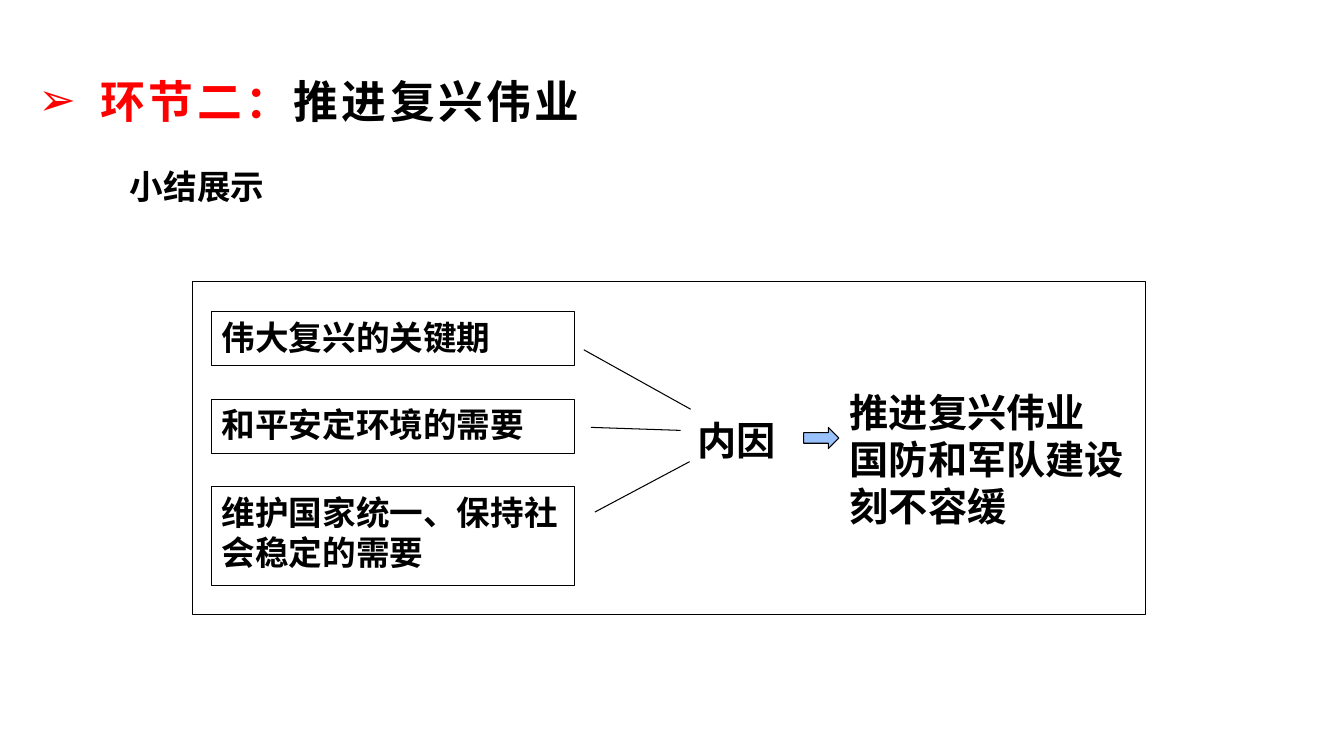
from lxml import etree
from pptx import Presentation
from pptx.dml.color import RGBColor
from pptx.enum.shapes import MSO_CONNECTOR, MSO_SHAPE
from pptx.enum.text import MSO_ANCHOR, PP_ALIGN
from pptx.oxml.ns import qn
from pptx.util import Inches, Pt

BLACK = RGBColor(0x00, 0x00, 0x00)
RED = RGBColor(0xFF, 0x00, 0x00)
LIGHT_BLUE = RGBColor(0x99, 0xC2, 0xFD)
RECTANGLE = MSO_SHAPE.RECTANGLE
RIGHT_ARROW = MSO_SHAPE.RIGHT_ARROW
STRAIGHT = MSO_CONNECTOR.STRAIGHT
TOP = MSO_ANCHOR.TOP
LEFT = PP_ALIGN.LEFT
CJK_FONT = "Noto Sans CJK SC"

prs = Presentation()
prs.slide_width = Inches(13.33)
prs.slide_height = Inches(7.5)
slide = prs.slides.add_slide(prs.slide_layouts[6])
shapes = slide.shapes


def add_outlined(kind, left, top, width, height, fill=None):
    shape = shapes.add_shape(kind, Inches(left), Inches(top), Inches(width), Inches(height))
    shape.shadow.inherit = False
    if fill is None:
        shape.fill.background()
    else:
        shape.fill.solid()
        shape.fill.fore_color.rgb = fill
    shape.line.color.rgb = BLACK
    shape.line.width = Pt(0.75)
    return shape


def add_bold_run(paragraph, text, size, font=CJK_FONT, color=BLACK):
    paragraph.alignment = LEFT
    run = paragraph.add_run()
    run.text = text
    run.font.size = Pt(size)
    run.font.bold = True
    run.font.name = font
    run.font.color.rgb = color
    east_asian = etree.SubElement(run.font._element, qn("a:ea"))
    east_asian.set("typeface", CJK_FONT)
    return run


# Summary frame with the three reasons
add_outlined(RECTANGLE, 1.91, 2.79, 9.45, 3.31)
reasons = [
    ("伟大复兴的关键期", 0.54),
    ("和平安定环境的需要", 0.54),
    ("维护国家统一、保持社会稳定的需要", 0.98),
]
for row, (reason, height) in enumerate(reasons):
    reason_box = add_outlined(RECTANGLE, 2.1, 3.09 + 0.87 * row, 3.6, height)
    reason_frame = reason_box.text_frame
    reason_frame.word_wrap = True
    reason_frame.vertical_anchor = TOP
    add_bold_run(reason_frame.paragraphs[0], reason, 24, "Arial")

# Lines from the reasons to the internal cause
for x1, y1, x2, y2 in [
    (5.79, 3.47, 6.85, 4.06),
    (5.86, 4.24, 6.75, 4.27),
    (5.9, 5.08, 6.84, 4.58),
]:
    link = shapes.add_connector(STRAIGHT, Inches(x1), Inches(y1), Inches(x2), Inches(y2))
    link.line.color.rgb = BLACK
    link.line.width = Pt(0.75)
    etree.SubElement(link._element.spPr, qn("a:effectLst"))

add_outlined(RIGHT_ARROW, 7.97, 4.24, 0.35, 0.21, LIGHT_BLUE)

# Cause, conclusion and subtitle
for left, top, width, height, lines, size, font in [
    (6.82, 4.08, 1.08, 0.52, ["内因"], 28, CJK_FONT),
    (8.33, 3.8, 3.03, 0.9, ["推进复兴伟业", "国防和军队建设刻不容缓"], 28, CJK_FONT),
    (1.19, 1.6, 2.48, 0.5, ["小结展示"], 24, "Arial"),
]:
    label = shapes.add_textbox(Inches(left), Inches(top), Inches(width), Inches(height))
    label_frame = label.text_frame
    label_frame.word_wrap = True
    for index, line in enumerate(lines):
        paragraph = label_frame.add_paragraph() if index else label_frame.paragraphs[0]
        add_bold_run(paragraph, line, size, font)

# Bulleted heading
heading = shapes.add_textbox(Inches(0.31), Inches(0.7), Inches(12), Inches(0.67))
heading_frame = heading.text_frame
heading_frame.word_wrap = True
heading_frame.margin_left = heading_frame.margin_right = Inches(0.07)
heading_frame.margin_top = heading_frame.margin_bottom = Inches(0.03)
heading_paragraph = heading_frame.paragraphs[0]
properties = heading_paragraph._p.get_or_add_pPr()
properties.set("marL", str(Inches(0.62)))
properties.set("indent", str(Inches(-0.62)))
etree.SubElement(properties, qn("a:buFont")).set("typeface", "Arial")
etree.SubElement(properties, qn("a:buChar")).set("char", "➢")
for text, color in [("环节二：", RED), ("推进复兴伟业", BLACK)]:
    run = add_bold_run(heading_paragraph, text, 32, color=color)
    run.font._element.set("spc", "240")

prs.save("out.pptx")
